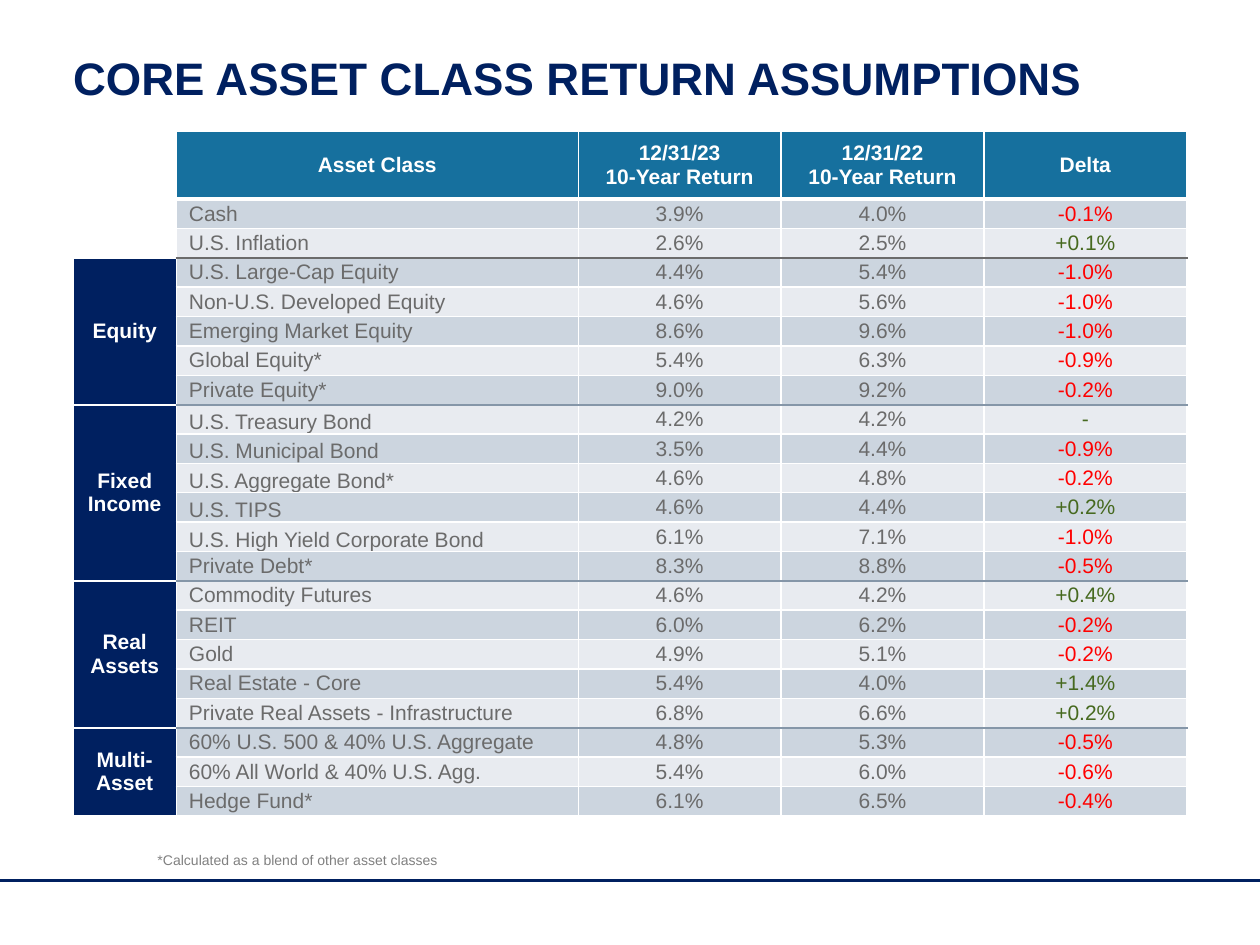
"""Build the slide of core asset class return assumptions."""
import pptx
import pptx.util
import pptx.dml.color
import pptx.enum.text
import pptx.enum.shapes
from lxml import etree

INCH, PT = pptx.util.Inches, pptx.util.Pt
ALIGN = pptx.enum.text.PP_ALIGN
ANCHOR = pptx.enum.text.MSO_ANCHOR
NS = "{http://schemas.openxmlformats.org/drawingml/2006/main}"

NAVY, TEAL, WHITE, GRAY = "002060", "16709E", "FFFFFF", "6B6B6B"
SLATE, RED, GREEN, NOTE = "8596A8", "FF0000", "46691F", "808080"
BANDS = ("CCD5DF", "E8EBF0")

TITLE = "CORE ASSET CLASS RETURN ASSUMPTIONS"
FOOT = "*Calculated as a blend of other asset classes"
HEADS = ["Asset Class", "12/31/23\n10-Year Return", "12/31/22\n10-Year Return", "Delta"]
GROUPS = [
    ("", [
        ("Cash", "3.9%", "4.0%", "-0.1%"),
        ("U.S. Inflation", "2.6%", "2.5%", "+0.1%"),
    ]),
    ("Equity", [
        ("U.S. Large-Cap Equity", "4.4%", "5.4%", "-1.0%"),
        ("Non-U.S. Developed Equity", "4.6%", "5.6%", "-1.0%"),
        ("Emerging Market Equity", "8.6%", "9.6%", "-1.0%"),
        ("Global Equity*", "5.4%", "6.3%", "-0.9%"),
        ("Private Equity*", "9.0%", "9.2%", "-0.2%"),
    ]),
    ("Fixed Income", [
        ("U.S. Treasury Bond", "4.2%", "4.2%", "-"),
        ("U.S. Municipal Bond", "3.5%", "4.4%", "-0.9%"),
        ("U.S. Aggregate Bond*", "4.6%", "4.8%", "-0.2%"),
        ("U.S. TIPS", "4.6%", "4.4%", "+0.2%"),
        ("U.S. High Yield Corporate Bond", "6.1%", "7.1%", "-1.0%"),
        ("Private Debt*", "8.3%", "8.8%", "-0.5%"),
    ]),
    ("Real\nAssets", [
        ("Commodity Futures", "4.6%", "4.2%", "+0.4%"),
        ("REIT", "6.0%", "6.2%", "-0.2%"),
        ("Gold", "4.9%", "5.1%", "-0.2%"),
        ("Real Estate - Core", "5.4%", "4.0%", "+1.4%"),
        ("Private Real Assets - Infrastructure", "6.8%", "6.6%", "+0.2%"),
    ]),
    ("Multi-Asset", [
        ("60% U.S. 500 & 40% U.S. Aggregate", "4.8%", "5.3%", "-0.5%"),
        ("60% All World & 40% U.S. Agg.", "5.4%", "6.0%", "-0.6%"),
        ("Hedge Fund*", "6.1%", "6.5%", "-0.4%"),
    ]),
]
COLS = [0.82, 3.19, 1.61, 1.61, 1.61]
LEFT, TOP, WIDE, HIGH, HEAD = 0.58, 1.04, 8.83, 5.44, 0.54
COUNT = sum(len(rows) for _, rows in GROUPS)
THIN = (WHITE, 1)
PAD = (0.11, 0.05, 0.11, 0.05)


def rgb(code):
    """Turn a hex string into a colour."""
    return pptx.dml.color.RGBColor.from_string(code)


def apply(item, form):
    """Set attributes from a dict."""
    for name, value in form.items():
        setattr(item, name, value)


def style(para, size, color, bold=False, align=ALIGN.LEFT):
    """Format each run of a paragraph."""
    para.alignment = align
    for run in para.runs:
        apply(run.font, {"name": "Arial", "size": PT(size), "bold": bold})
        run.font.color.rgb = rgb(color)


def inset(item, pad):
    """Set the four margins in inches."""
    sides = ("left", "top", "right", "bottom")
    apply(item, {f"margin_{side}": INCH(gap) for side, gap in zip(sides, pad)})


def edge(cell, top=THIN, bottom=THIN):
    """Draw the four borders of a cell."""
    props = cell._tc.get_or_add_tcPr()
    for side, (color, width) in zip("LRTB", (THIN, THIN, top, bottom)):
        line = etree.SubElement(props, f"{NS}ln{side}", w=str(PT(width)))
        fill = etree.SubElement(line, f"{NS}solidFill")
        etree.SubElement(fill, f"{NS}srgbClr", val=color)


def paint(cell, text, fill, color, bold=False, align=ALIGN.CENTER,
          pad=(0, 0, 0, 0), anchor=ANCHOR.MIDDLE):
    """Fill a cell and set its text."""
    cell.text = text
    cell.vertical_anchor = anchor
    inset(cell, pad)
    cell.fill.solid()
    cell.fill.fore_color.rgb = rgb(fill)
    for para in cell.text_frame.paragraphs:
        style(para, 12, color, bold, align)


def clear(cell):
    """Make a cell empty, small and unfilled."""
    inset(cell, (0, 0, 0, 0))
    cell.fill.background()
    para = cell.text_frame.paragraphs[0]._p
    etree.SubElement(para, f"{NS}endParaRPr", sz="1200")


def fill_row(table, row, texts, top, bottom):
    """Write one asset class across the table."""
    for col, text in enumerate(texts, 1):
        cell = table.cell(row, col)
        if top != THIN or bottom != THIN:
            edge(cell, top, bottom)
        form = {"color": GRAY}
        if col == 1:
            low = text.startswith("U.S.") and 8 <= row <= 12
            form.update(align=ALIGN.LEFT, pad=(0.1, 0, 0, 0),
                        anchor=ANCHOR.BOTTOM if low else ANCHOR.MIDDLE)
        elif col == 4:
            form["color"] = RED if text[0] == "-" and len(text) > 1 else GREEN
        paint(cell, text, BANDS[(row - 1) % 2], **form)


def add_grid(slide):
    """Build the table group by group."""
    frame = slide.shapes.add_table(COUNT + 1, len(COLS), INCH(LEFT), INCH(TOP),
                                   INCH(WIDE), INCH(HIGH))
    table = frame.table
    for col, width in zip(table.columns, COLS):
        col.width = INCH(width)
    for line in table.rows:
        line.height = INCH((HIGH - HEAD) / COUNT)
    table.rows[0].height = INCH(HEAD)
    for row in range(COUNT + 1):
        clear(table.cell(row, 0))
    for col, text in enumerate(HEADS, 1):
        cell = table.cell(0, col)
        edge(cell, bottom=(WHITE, 3))
        paint(cell, text, TEAL, WHITE, True, pad=PAD)
    row, top = 1, THIN
    for num, (name, rows) in enumerate(GROUPS):
        final = num == len(GROUPS) - 1
        rule = THIN if final else (SLATE, 1.5) if num else (GRAY, 1)
        label = table.cell(row, 0)
        label.merge(table.cell(row + len(rows) - 1, 0))
        if name:
            # A new fill follows the borders in the cell properties.
            label.fill.background()
            props = label._tc.get_or_add_tcPr()
            for node in list(props):
                props.remove(node)
            edge(label, (WHITE, top[1]), (WHITE, rule[1]))
            paint(label, name, NAVY, WHITE, True, pad=PAD)
        for pos, texts in enumerate(rows):
            fill_row(table, row + pos, texts, THIN if pos else top,
                     rule if pos == len(rows) - 1 else THIN)
        row, top = row + len(rows), rule


def add_text(box, text, place, size, color, bold, pad):
    """Place a text shape and write one line in it."""
    apply(box, dict(zip(("left", "top", "width", "height"), map(INCH, place))))
    frame = box.text_frame
    frame.text = text
    apply(frame, {"word_wrap": True, "vertical_anchor": ANCHOR.BOTTOM,
                  "auto_size": pptx.enum.text.MSO_AUTO_SIZE.NONE})
    inset(frame, pad)
    style(frame.paragraphs[0], size, color, bold)


def main():
    """Build and save the deck."""
    deck = pptx.Presentation()
    apply(deck, {"slide_width": INCH(10), "slide_height": INCH(7.5)})
    slide = deck.slides.add_slide(deck.slide_layouts[5])
    kind = pptx.enum.shapes.MSO_CONNECTOR.STRAIGHT
    rule = slide.shapes.add_connector(kind, 0, INCH(6.99), INCH(10), INCH(6.99))
    rule.line.color.rgb = rgb(NAVY)
    rule.line.width = PT(1.5)
    etree.SubElement(rule._element.spPr, f"{NS}effectLst")
    add_grid(slide)
    title = slide.shapes.title
    add_text(title, TITLE, (LEFT, 0.01, WIDE, 0.82), 26, NAVY, True, (0, 0.05, 0, 0))
    title.text_frame.paragraphs[0].line_spacing = PT(27)
    foot = slide.shapes.add_textbox(0, 0, 0, 0)
    add_text(foot, FOOT, (1.25, 6.42, 8.17, 0.47), 8, NOTE, False, (0, 0, 0, 0))
    deck.save("out.pptx")


if __name__ == "__main__":
    main()
